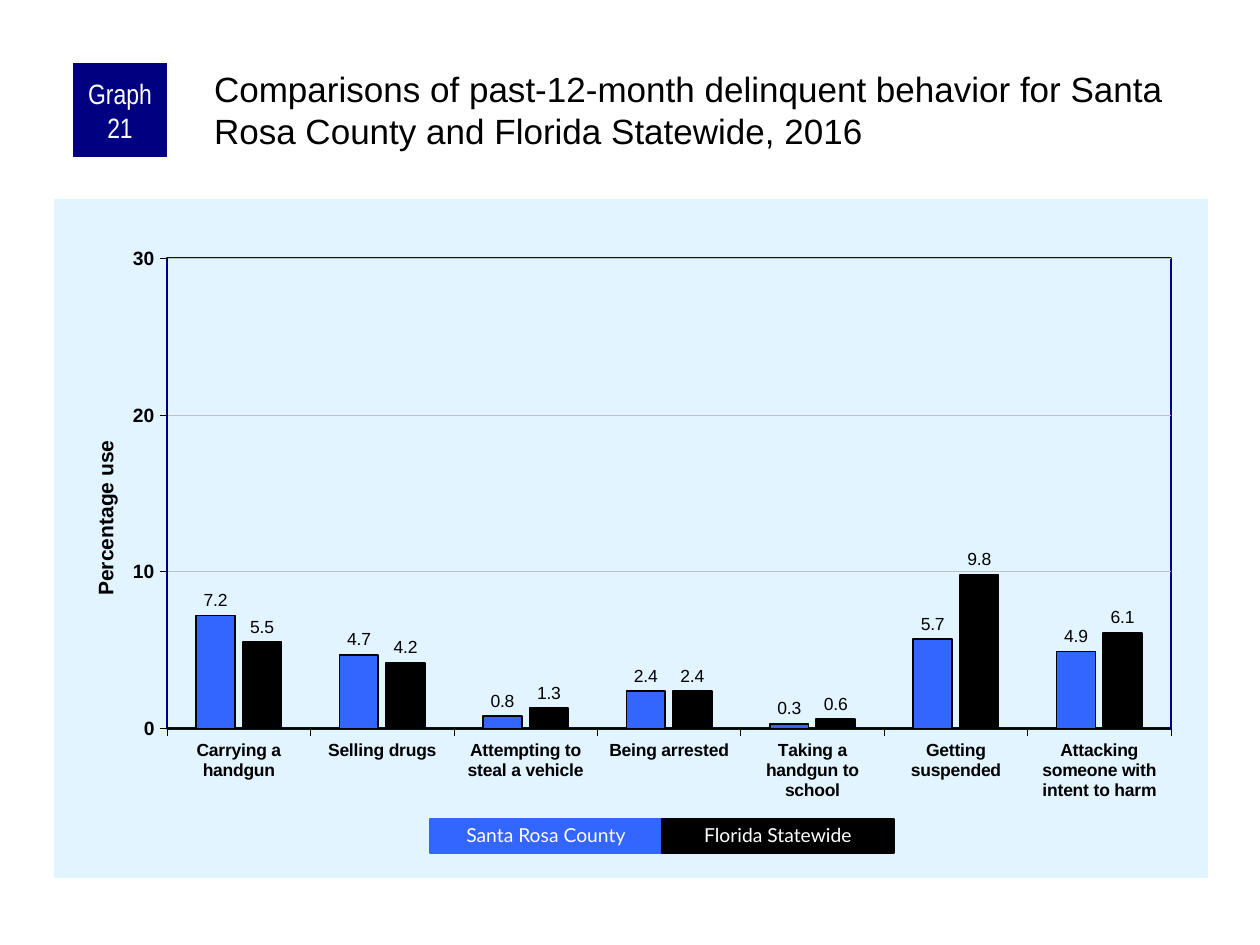
from lxml.etree import fromstring
from pptx import Presentation
from pptx.chart.data import CategoryChartData
from pptx.dml.color import RGBColor
from pptx.enum.chart import XL_CHART_TYPE, XL_LABEL_POSITION, XL_TICK_MARK
from pptx.enum.shapes import MSO_SHAPE
from pptx.enum.text import MSO_ANCHOR, PP_ALIGN
from pptx.oxml.ns import nsdecls, qn
from pptx.util import Emu, Pt

TITLE = ("Comparisons of past-12-month delinquent behavior for "
         "Santa Rosa County and Florida Statewide, 2016")
BADGE = "Graph 21"
AXIS_TITLE = "Percentage use"
BEHAVIORS = ["Carrying a handgun", "Selling drugs", "Attempting to steal a vehicle",
             "Being arrested", "Taking a handgun to school", "Getting suspended",
             "Attacking someone with intent to harm"]
SERIES = [
    ("Santa Rosa County", "county", (7.2, 4.7, 0.8, 2.4, 0.3, 5.7, 4.9)),
    ("Florida Statewide", "state", (5.5, 4.2, 1.3, 2.4, 0.6, 9.8, 6.1)),
]

THEME = {
    "county": "3366FF", "state": "000000", "navy": "000080", "panel": "E1F4FF",
    "grid": "C0C0C0", "ink": "000000", "paper": "FFFFFF",
    "title": {"name": "Arial", "size": 20, "color": "ink"},
    "badge": {"name": "Arial Narrow", "size": 16, "color": "paper"},
    "legend": {"name": "Lato", "size": 11, "color": "paper"},
    "chart": {"name": "Arial", "size": 11.5, "color": "ink"},
    "labels": {"name": "Arial", "size": 10, "color": "ink"},
    "categories": {"name": "Arial", "size": 10, "color": "ink", "bold": True},
    "values": {"name": "Arial", "size": 11, "color": "ink", "bold": True},
    "axis title": {"name": "Arial", "size": 12, "color": "ink", "bold": True},
}

CHART_BOX = (54, 199, 1154, 679)
BADGE_BOX = (73, 63, 94, 94)
TITLE_BOX = (210, 63, 998, 105)
LEGEND_BOX = (430, 819, 232, 34)
PLOT_LAYOUT = {"layoutTarget": "inner", "xMode": "edge", "yMode": "edge",
               "x": 0.098, "y": 0.087, "w": 0.87, "h": 0.693}
AXIS_TITLE_LAYOUT = {"xMode": "edge", "yMode": "edge", "x": 0.03, "y": 0.35}


def px(length):
    return Emu(round(length * 914400 / 126))


def color(name):
    return RGBColor.from_string(THEME[name])


def set_font(font, style):
    for key, value in THEME[style].items():
        if key == "color":
            font.color.rgb = color(value)
        else:
            setattr(font, key, Pt(value) if key == "size" else value)


def set_line(line, name, width):
    line.color.rgb = color(name)
    line.width = Pt(width)


def write(box, text, style, margins=None, **paragraph_format):
    frame = box.text_frame
    frame.word_wrap = True
    for side, margin in (margins or {}).items():
        setattr(frame, "margin_" + side, px(margin))
    para = frame.paragraphs[0]
    for key, value in paragraph_format.items():
        setattr(para, key, value)
    span = para.add_run()
    span.text = text
    set_font(span.font, style)
    return frame


def add_block(page, place, fill):
    block = page.shapes.add_shape(MSO_SHAPE.RECTANGLE, *map(px, place))
    block.shadow.inherit = False
    block.fill.solid()
    block.fill.fore_color.rgb = color(fill)
    block.line.fill.background()
    return block


def set_layout(parent, index, values):
    for old in parent.findall(qn("c:layout")):
        parent.remove(old)
    items = "".join(f'<c:{key} val="{value}"/>' for key, value in values.items())
    parent.insert(index, fromstring(
        f'<c:layout {nsdecls("c")}><c:manualLayout>{items}</c:manualLayout></c:layout>'))


def area_format(fill, line):
    """Chart area formatting, which python-pptx does not offer."""
    return fromstring(f'<c:spPr {nsdecls("c", "a")}>{fill}{line}</c:spPr>')


def solid(name):
    return f'<a:solidFill><a:srgbClr val="{THEME[name]}"/></a:solidFill>'


def add_behavior_chart(page):
    data = CategoryChartData(number_format="0.0")
    data.categories = BEHAVIORS
    for name, _, values in SERIES:
        data.add_series(name, values)
    chart = page.shapes.add_chart(
        XL_CHART_TYPE.COLUMN_CLUSTERED, *map(px, CHART_BOX), data).chart
    chart.has_title = chart.has_legend = False
    set_font(chart.font, "chart")

    plot = chart.plots[0]
    plot.gap_width, plot.overlap, plot.vary_by_categories = 150, -20, False
    for series, (_, fill, _) in zip(plot.series, SERIES):
        series.format.fill.solid()
        series.format.fill.fore_color.rgb = color(fill)
        set_line(series.format.line, "ink", 1)
        labels = series.data_labels
        for key, value in {"show_value": True, "number_format": "0.0",
                           "number_format_is_linked": False,
                           "position": XL_LABEL_POSITION.OUTSIDE_END}.items():
            setattr(labels, key, value)
        set_font(labels.font, "labels")

    value_axis = chart.value_axis
    for axis, style in ((chart.category_axis, "categories"), (value_axis, "values")):
        axis.major_tick_mark = XL_TICK_MARK.OUTSIDE
        axis.minor_tick_mark = XL_TICK_MARK.NONE
        set_font(axis.tick_labels.font, style)
        set_line(axis.format.line, "ink", 0.25)
    for key, value in {"minimum_scale": 0, "maximum_scale": 30, "major_unit": 10,
                       "has_major_gridlines": True}.items():
        setattr(value_axis, key, value)
    value_axis.tick_labels.number_format = "0"
    value_axis.tick_labels.number_format_is_linked = False
    set_line(value_axis.major_gridlines.format.line, "grid", 0.25)
    span = value_axis.axis_title.text_frame.paragraphs[0].add_run()
    span.text = AXIS_TITLE
    set_font(span.font, "axis title")
    value_axis.axis_title.text_frame._txBody.bodyPr.set("rot", "-5400000")

    chart_part = chart._chartSpace.find(qn("c:chart"))
    plot_area = chart_part.find(qn("c:plotArea"))
    set_layout(plot_area, 0, PLOT_LAYOUT)
    set_layout(next(plot_area.iter(qn("c:title"))), 1, AXIS_TITLE_LAYOUT)
    plot_area.append(area_format("<a:noFill/>", f'<a:ln w="{Pt(1.5)}">{solid("navy")}</a:ln>'))
    chart_part.addnext(area_format(solid("panel"), "<a:ln><a:noFill/></a:ln>"))


def add_heading(page):
    badge = add_block(page, BADGE_BOX, "navy")
    frame = write(badge, BADGE, "badge", {"left": 6, "top": 0, "right": 6, "bottom": 0},
                  alignment=PP_ALIGN.CENTER)
    frame.vertical_anchor = MSO_ANCHOR.MIDDLE

    title = page.shapes.title
    title.left, title.top, title.width, title.height = map(px, TITLE_BOX)
    frame = write(title, TITLE, "title", {"left": 4, "top": 4, "right": 0, "bottom": 0},
                  alignment=PP_ALIGN.LEFT)
    frame.vertical_anchor = MSO_ANCHOR.TOP


def add_legend(page):
    left, top, width, height = LEGEND_BOX
    for index, (name, fill, _) in enumerate(SERIES):
        key = add_block(page, (left + index * width, top, width, height), fill)
        set_line(key.line, fill, 0.75)
        frame = write(key, name, "legend", alignment=PP_ALIGN.CENTER, line_spacing=0.9)
        frame.vertical_anchor = MSO_ANCHOR.MIDDLE


def main():
    deck = Presentation()
    deck.slide_width, deck.slide_height = px(1260), px(945)
    page = deck.slides.add_slide(deck.slide_layouts[5])
    add_behavior_chart(page)
    add_heading(page)
    add_legend(page)
    deck.save("out.pptx")


if __name__ == "__main__":
    main()
